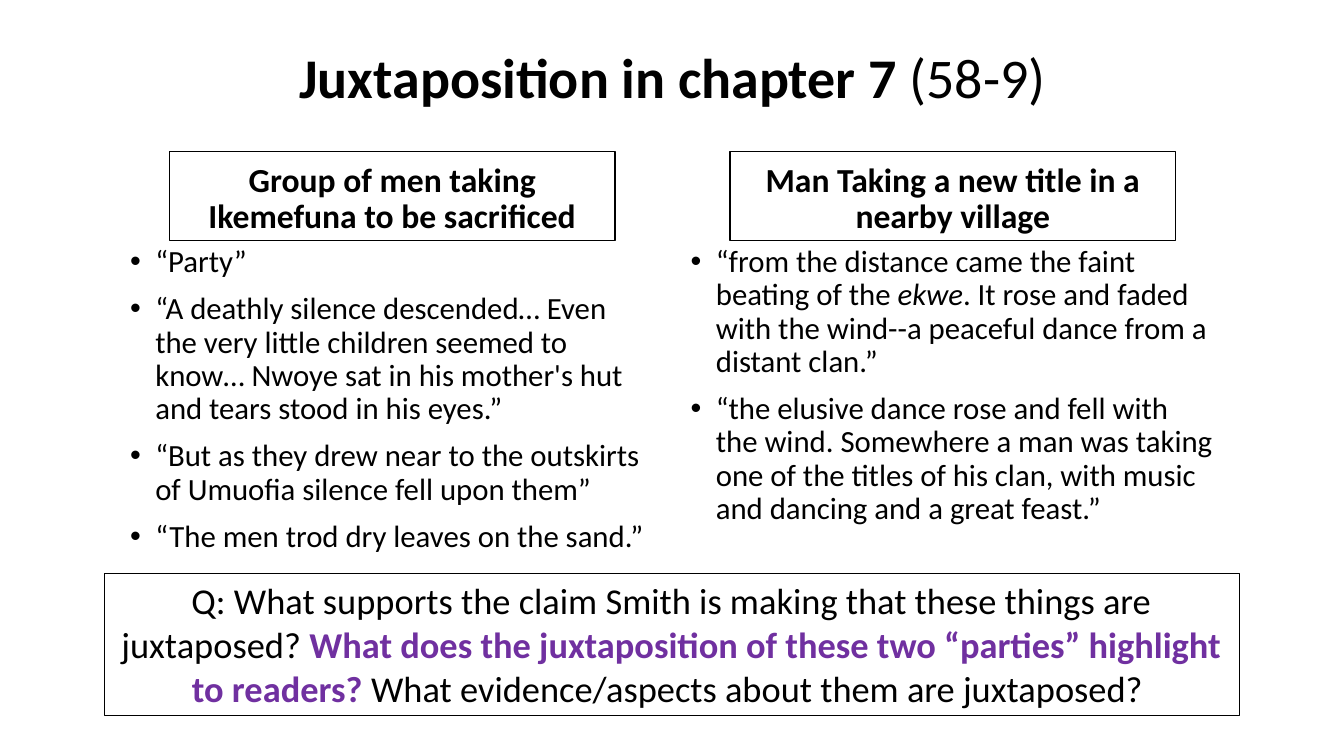
import pptx
import pptx.dml.color
import pptx.enum.text
import pptx.oxml
import pptx.oxml.ns
import pptx.util

Inches = pptx.util.Inches
Pt = pptx.util.Pt
RGBColor = pptx.dml.color.RGBColor
ALIGN = pptx.enum.text.PP_ALIGN
ANCHOR = pptx.enum.text.MSO_ANCHOR
FIT = pptx.enum.text.MSO_AUTO_SIZE

BLACK = RGBColor(0x00, 0x00, 0x00)
PURPLE = RGBColor(0x70, 0x30, 0xA0)
FONT = "Calibri"

HEAD_H = 0.89
LIST_H = 3.3
HEAD_IN = 0.49  # heading offset from the left of its list

LEFT = (
    "Group of men taking Ikemefuna to be sacrificed",
    [
        [("“Party”", {})],
        [("“A deathly silence descended… Even the very little children seemed to "
          "know… Nwoye sat in his mother's hut and tears stood in his eyes.”", {})],
        [("“But as they drew near to the outskirts of Umuofia silence fell upon them”", {})],
        [("“The men trod dry leaves on the sand.”", {})],
    ],
)
RIGHT = (
    "Man Taking a new title in a nearby village",
    [
        [("“from the distance came the faint beating of the ", {}),
         ("ekwe", {"italic": True}),
         (". It rose and faded with the wind--a peaceful dance from a distant clan.”", {})],
        [("“the elusive dance rose and fell with the wind. Somewhere a man was taking "
          "one of the titles of his clan, with music and dancing and a great feast.”", {})],
    ],
)
TITLE = [("Juxtaposition in chapter 7 ", {"bold": True}), ("(58-9)", {})]
QUERY = [
    ("Q: What supports the claim Smith is making that these things are juxtaposed? ", {}),
    ("What does the juxtaposition of these two “parties” highlight to readers? ",
     {"bold": True, "color": PURPLE}),
    ("What evidence/aspects about them are juxtaposed? ", {}),
]


def place(shape, box):
    shape.left, shape.top, shape.width, shape.height = map(Inches, box)


def frame(shape):
    """Draw a thin black outline with no fill."""
    shape.fill.background()
    shape.line.color.rgb = BLACK
    shape.line.width = Pt(0.75)


def set_up(shape, anchor):
    text = shape.text_frame
    text.word_wrap = True
    text.auto_size = FIT.NONE
    text.vertical_anchor = anchor
    return text


def add_runs(par, runs, size):
    for words, style in runs:
        run = par.add_run()
        run.text = words
        font = run.font
        font.name = FONT
        font.size = Pt(size)
        font.bold = style.get("bold", False)
        font.italic = style.get("italic", False)
        font.color.rgb = style.get("color", BLACK)


def space(par, before=10):
    par.line_spacing = 0.9
    par.space_before = Pt(before)


def add_bullet(par):
    props = par._p.get_or_add_pPr()
    props.set("marL", str(Inches(0.25)))
    props.set("indent", str(-Inches(0.25)))
    ns = pptx.oxml.ns.nsdecls("a")
    for tag in ('buFont %s typeface="Arial"', 'buChar %s char="•"'):
        props.append(pptx.oxml.parse_xml(f"<a:{tag % ns}/>"))


def fill_title(shape, box):
    place(shape, box)
    par = set_up(shape, ANCHOR.MIDDLE).paragraphs[0]
    par.alignment = ALIGN.CENTER
    space(par, 0)
    add_runs(par, TITLE, 40)


def fill_column(head, body, data, box):
    """Put a framed heading over a bulleted list."""
    left, top, width = box
    title, items = data

    place(head, (left + HEAD_IN, top, 4.42, HEAD_H))
    frame(head)
    par = set_up(head, ANCHOR.BOTTOM).paragraphs[0]
    par.alignment = ALIGN.CENTER
    space(par)
    add_runs(par, [(title, {"bold": True})], 24)

    place(body, (left, top + HEAD_H, width, LIST_H))
    text = set_up(body, ANCHOR.TOP)
    for i, runs in enumerate(items):
        par = text.add_paragraph() if i else text.paragraphs[0]
        space(par)
        add_bullet(par)
        add_runs(par, runs, 22)


def add_query(slide, box):
    shape = slide.shapes.add_textbox(*map(Inches, box))
    frame(shape)
    text = set_up(shape, ANCHOR.TOP)
    text.auto_size = FIT.SHAPE_TO_FIT_TEXT
    par = text.paragraphs[0]
    par.alignment = ALIGN.CENTER
    add_runs(par, QUERY, 26)


def main():
    deck = pptx.Presentation()
    deck.slide_width = Inches(13.33)
    deck.slide_height = Inches(7.5)
    layout = deck.slide_layouts.get_by_name("Comparison")
    slide = deck.slides.add_slide(layout)
    title, head_a, list_a, head_b, list_b = slide.placeholders

    fill_title(title, (2.17, 0.17, 9, 1.25))
    fill_column(head_a, list_a, LEFT, (1.19, 1.5, 5.39))
    fill_column(head_b, list_b, RIGHT, (6.75, 1.5, 5.4))
    add_query(slide, (1.04, 5.69, 11.25, 1.41))
    deck.save("out.pptx")


if __name__ == "__main__":
    main()
